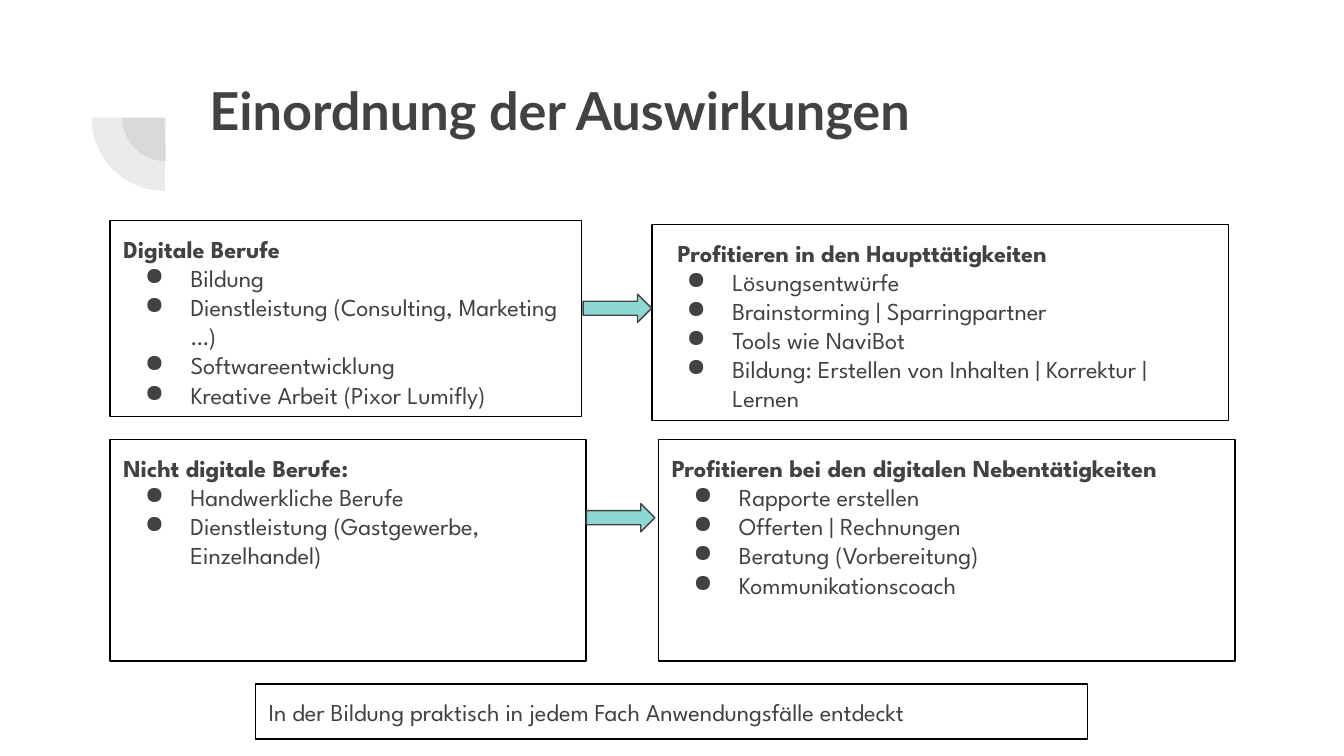
from lxml import etree
from pptx import Presentation
from pptx.dml.color import RGBColor
from pptx.enum import shapes, text
from pptx.oxml import ns
from pptx.util import Pt

INK = RGBColor(0x42, 0x42, 0x42)
BLACK = RGBColor(0, 0, 0)
TEAL = RGBColor(0x8D, 0xD8, 0xD3)
TITLE_FONT = "Lato"
BODY_FONT = "League Spartan"
INSET = 7.2
BODY_SIZE = 13

# Heading, bullets, heading indent, then left, top, width, height
PANELS = [
    ("Digitale Berufe",
     ["Bildung", "Dienstleistung (Consulting, Marketing …)",
      "Softwareentwicklung", "Kreative Arbeit (Pixor Lumifly)"],
     0, (59, 118.2, 252.7, 105.1)),
    ("Nicht digitale Berufe:",
     ["Handwerkliche Berufe", "Dienstleistung (Gastgewerbe, Einzelhandel)"],
     0, (59, 235.6, 255, 118.6)),
    ("Profitieren in den Haupttätigkeiten",
     ["Lösungsentwürfe", "Brainstorming | Sparringpartner", "Tools wie NaviBot",
      "Bildung: Erstellen von Inhalten | Korrektur | Lernen"],
     6.75, (349.2, 120.2, 308.9, 105.1)),
    ("Profitieren bei den digitalen Nebentätigkeiten",
     ["Rapporte erstellen", "Offerten | Rechnungen",
      "Beratung (Vorbereitung)", "Kommunikationscoach"],
     0, (352.8, 235.6, 308.9, 118.6)),
]
ARROWS = [(312.4, 157.6), (314.1, 269.8)]


def add_shape(page, kind, bounds, fill=None, line=None):
    shape = page.shapes.add_shape(kind, *[Pt(value) for value in bounds])
    shape.shadow.inherit = False
    if fill is None:
        shape.fill.background()
    else:
        shape.fill.solid()
        shape.fill.fore_color.rgb = fill
    if line is None:
        shape.line.fill.background()
    else:
        shape.line.color.rgb = line
        shape.line.width = Pt(0.75)
    return shape


def set_frame(shape):
    frame = shape.text_frame
    frame.word_wrap = True
    frame.vertical_anchor = text.MSO_ANCHOR.TOP
    frame.margin_left = frame.margin_right = Pt(INSET)
    frame.margin_top = frame.margin_bottom = Pt(INSET)
    return frame


def write(para, words, font=BODY_FONT, size=BODY_SIZE, bold=False):
    para.text = words
    para.alignment = text.PP_ALIGN.LEFT
    for span in para.runs:
        span.font.name = font
        span.font.size = Pt(size)
        span.font.bold = bold
        span.font.color.rgb = INK


def set_indent(para, left, first=0):
    properties = para._p.get_or_add_pPr()
    properties.set("marL", str(Pt(left)))
    properties.set("indent", str(Pt(first)))
    return properties


def add_bullet(para):
    properties = set_indent(para, 36, -24.5)
    color = etree.SubElement(properties, ns.qn("a:buClr"))
    etree.SubElement(color, ns.qn("a:srgbClr"), val=str(INK))
    etree.SubElement(properties, ns.qn("a:buChar"), char="●")


def add_quarter(page, left, top, size):
    quarter = add_shape(page, shapes.MSO_SHAPE.PIE, (left, top, size, size), INK)
    quarter.adjustments[0] = 107.93
    quarter.adjustments[1] = 162
    quarter.rotation = 270
    color = quarter.fill._xPr.find(".//" + ns.qn("a:srgbClr"))
    etree.SubElement(color, ns.qn("a:alpha"), val="10000")


def add_title(page, words):
    box = page.shapes.add_textbox(Pt(105.1), Pt(34.6), Pt(553.7), Pt(78.5))
    write(set_frame(box).paragraphs[0], words, TITLE_FONT, 28, True)


def add_panel(page, heading, bullets, heading_indent, bounds):
    box = add_shape(page, shapes.MSO_SHAPE.RECTANGLE, bounds, line=BLACK)
    frame = set_frame(box)
    write(frame.paragraphs[0], heading, bold=True)
    set_indent(frame.paragraphs[0], heading_indent)
    for words in bullets:
        para = frame.add_paragraph()
        write(para, words)
        add_bullet(para)


def add_note(page, words):
    box = add_shape(page, shapes.MSO_SHAPE.RECTANGLE,
                    (136.8, 366.5, 445.7, 29.5), line=BLACK)
    write(set_frame(box).paragraphs[0], words)


def main():
    deck = Presentation()
    deck.slide_width, deck.slide_height = Pt(720), Pt(405)
    page = deck.slides.add_slide(deck.slide_layouts[6])

    # Quarter-circle ornament and title
    add_quarter(page, 65.5, 39.6, 46.8)
    add_quarter(page, 49, 23.8, 78.5)
    add_title(page, "Einordnung der Auswirkungen")

    # Occupations on the left, benefits on the right
    for panel in PANELS:
        add_panel(page, *panel)
    for left, top in ARROWS:
        add_shape(page, shapes.MSO_SHAPE.RIGHT_ARROW,
                  (left, top, 36.7, 15.1), TEAL, INK)

    # Closing remark
    add_note(page, "In der Bildung praktisch in jedem Fach Anwendungsfälle entdeckt")
    deck.save("out.pptx")


if __name__ == "__main__":
    main()
